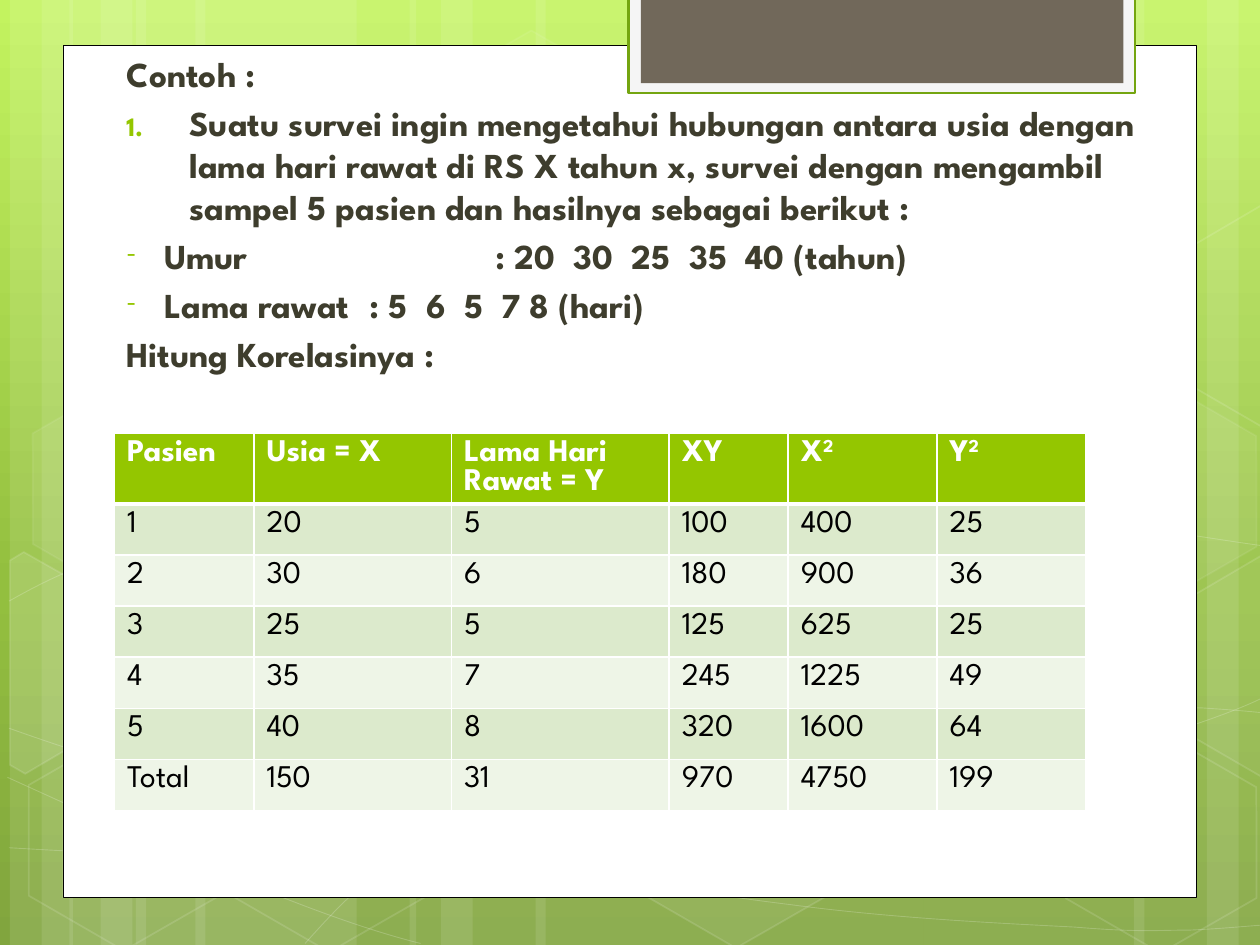
from copy import deepcopy
from dataclasses import dataclass

from lxml import etree
from pptx import Presentation
from pptx.dml.color import RGBColor
from pptx.enum import shapes as kinds, text as text_enum
from pptx.oxml import ns
from pptx.util import Cm, Pt


@dataclass(frozen=True)
class Theme:
    font: str = "League Spartan"
    body_size: int = 20
    table_size: int = 18
    white: str = "FFFFFF"
    black: str = "000000"
    body: str = "3E3D2D"
    accent: str = "94C600"
    banner: str = "71685A"
    banner_frame: str = "F5F5F5"
    banner_line: str = "74A510"
    bands: tuple = ("DCEACC", "EEF5E7")
    backdrop: tuple = ((0, "C3F35F"), (0.62, "93BF3F"), (1, "81A53E"))


theme = Theme()


def paint(shape, fill=None, line=None, width=1, fill_alpha=100, line_alpha=100):
    """Set fill and outline with their opacity in percent; None means no paint."""
    shape.shadow.inherit = False
    for part, color, alpha, route in (
            (shape.fill, fill, fill_alpha, "a:solidFill/a:srgbClr"),
            (shape.line.fill, line, line_alpha, "a:ln/a:solidFill/a:srgbClr")):
        if color is None:
            part.background()
            continue
        part.solid()
        part.fore_color.rgb = RGBColor.from_string(color)
        if alpha < 100:
            owner = shape._element.spPr.xpath(route)[0]
            etree.SubElement(owner, ns.qn("a:alpha")).set("val", str(alpha * 1000))
    if line:
        shape.line.width = Pt(width)


def add_run(paragraph, content, size, color, bold):
    run = paragraph.add_run()
    run.text = content
    run.font.name, run.font.size, run.font.bold = theme.font, Pt(size), bold
    run.font.color.rgb = RGBColor.from_string(color)
    return run


deck = Presentation()
deck.slide_width, deck.slide_height = Cm(25.4), Cm(19.05)
slide = deck.slides.add_slide(deck.slide_layouts[6])
canvas = slide.shapes
rect = kinds.MSO_SHAPE.RECTANGLE

# Backdrop gradient, top to bottom
backdrop = slide.background.fill
backdrop.gradient()
backdrop.gradient_angle = 270
stop_list = slide.background._cSld.find(".//" + ns.qn("a:gsLst"))
stop_list.append(deepcopy(stop_list[0]))
for stop, (position, color) in zip(backdrop.gradient_stops, theme.backdrop):
    stop.position = position
    stop.color.rgb = RGBColor.from_string(color)

# Pale vertical strips: left, width
for left, width in [(2.74, 4.45), (0.2, 1.27), (0.84, 2.11), (3.94, 4.45),
                    (1.4, 1.27), (2.03, 2.11), (18.62, 4.45), (24.33, 1.27),
                    (22.86, 2.11), (10.8, 7.82), (8.26, 1.27), (8.89, 2.11)]:
    strip = canvas.add_shape(rect, Cm(left), 0, Cm(width), deck.slide_height)
    paint(strip, theme.white, fill_alpha=10)

# Thin waves: a start point, then three points (two handles and an end) per curve
waves = [
    [(0.18, 17.09), (1.55, 17.17), (2.92, 17.25), (4.83, 17.22),
     (6.73, 17.2), (9.09, 17.15), (11.63, 16.89), (14.17, 16.64), (17.78, 16.15),
     (20.12, 15.67), (22.43, 15.19), (24.82, 14.43), (25.58, 14)],
    [(0.18, 12.12), (0.91, 11.71), (1.65, 11.33), (3.07, 10.95),
     (4.52, 10.57), (6.58, 10.01), (8.81, 9.83), (11.07, 9.65), (13.82, 9.63),
     (16.61, 9.83), (19.41, 10.01), (24.05, 10.82), (25.58, 11.02)],
    [(0.15, 15.67), (3.23, 17.07), (6.27, 18.47), (8.48, 19.02)],
    [(0.18, 14.68), (0.97, 14.96), (1.78, 15.24), (3.25, 15.65),
     (4.72, 16.03), (6.93, 16.66), (9.07, 17.09), (11.18, 17.53), (13.84, 17.98),
     (15.95, 18.24), (18.06, 18.52), (20.32, 18.62), (21.67, 18.69), (22.99, 18.8),
     (23.34, 18.75), (24, 18.75), (24.66, 18.72), (25.12, 18.67), (25.58, 18.64)],
    [(6.15, 19.02), (6.6, 18.52), (7.06, 18.01), (7.67, 17.55),
     (8.31, 17.09), (9.14, 16.59), (9.86, 16.23), (10.57, 15.88), (11, 15.72),
     (11.94, 15.47), (12.85, 15.21), (14.55, 14.86), (15.44, 14.68), (16.36, 14.5),
     (16.48, 14.5), (17.27, 14.45), (18.06, 14.38), (19.3, 14.3), (20.17, 14.27),
     (21.06, 14.25), (22.5, 14.27), (24.21, 14.27), (24.66, 14.3), (25.1, 14.33),
     (25.55, 14.38)],
]
for wave_points in waves:
    start, *rest = [(Cm(x), Cm(y)) for x, y in wave_points]
    outline = canvas.build_freeform(*start)
    outline.add_line_segments(rest, close=False)
    wave = outline.convert_to_shape()
    segments = wave._element.xpath(".//a:lnTo")
    for i in range(0, len(segments), 3):
        curve = etree.SubElement(segments[i].getparent(), ns.qn("a:cubicBezTo"))
        for segment in segments[i:i + 3]:
            curve.append(segment[0])
            segment.getparent().remove(segment)
    paint(wave, line=theme.white, width=0.5, line_alpha=20)

# Hexagons: left, top, fill opacity, line opacity
for left, top, fill_alpha, line_alpha in [
        (8.48, 0.91, 4, 8), (12.62, 14.96, 6, 12), (0.28, 15.01, 0, 12),
        (0.36, 7.92, 7, 8), (4.42, 15.04, 0, 12), (21.18, 15.06, 0, 12),
        (21.18, 7.98, 7, 8)]:
    hexagon = canvas.add_shape(kinds.MSO_SHAPE.HEXAGON, Cm(left), Cm(top), Cm(4.45), Cm(3.86))
    hexagon.adjustments[0] = 0.29
    hexagon.rotation = 30
    paint(hexagon, theme.white if fill_alpha else None, theme.white,
          fill_alpha=fill_alpha, line_alpha=line_alpha)

# Hexagons cut by the slide edges: corners, vertical shift, fill opacity
left_corners = [(0.2, 11.3), (0.48, 11.13), (2.44, 12.24), (2.41, 14.48), (0.51, 15.6), (0.2, 15.42)]
right_corners = [(23.52, 12.32), (25.43, 11.2), (25.63, 11.33), (25.63, 15.57), (25.45, 15.67),
                 (23.52, 14.55)]
for corners, shift, fill_alpha in [(left_corners, 0, 10), (right_corners, 0, 4),
                                   (right_corners, -7.06, 0)]:
    start, *rest = [(Cm(x), Cm(y + shift)) for x, y in corners]
    outline = canvas.build_freeform(*start)
    outline.add_line_segments(rest)
    paint(outline.convert_to_shape(), theme.white if fill_alpha else None, theme.white,
          fill_alpha=fill_alpha, line_alpha=12)

# White page and the banner hanging over its top edge
for left, top, width, height, fill, line, weight in [
        (1.27, 0.91, 22.86, 17.19, theme.white, theme.black, 0.5),
        (12.67, -0.05, 10.21, 1.93, theme.banner_frame, theme.banner_line, 1.25),
        (12.92, -0.05, 9.73, 1.73, theme.banner, None, 0)]:
    panel = canvas.add_shape(rect, Cm(left), Cm(top), Cm(width), Cm(height))
    paint(panel, fill, line, weight)

# Problem statement: text, left margin, first-line indent, bullet, tab stops
numbered = ("a:buAutoNum", {"type": "arabicPeriod"})
dashed = ("a:buChar", {"char": "-"})
statement = [
    ("Contoh :", 0.18, 0, None, ()),
    ("Suatu survei ingin mengetahui hubungan antara usia dengan lama hari rawat di RS X "
     "tahun x, survei dengan mengambil sampel 5 pasien dan hasilnya sebagai berikut :",
     1.45, -1.27, numbered, ()),
    ("Umur\t\t: 20  30  25  35  40 (tahun)", 0.94, -0.76, dashed, (5.08, 7.62)),
    ("Lama rawat\t: 5  6  5  7 8 (hari)", 0.94, -0.76, dashed, ()),
    ("Hitung Korelasinya :", 0.18, 0, None, ()),
]
problem = canvas.add_textbox(Cm(2.12), Cm(0.93), Cm(21.59), Cm(16.61)).text_frame
problem.word_wrap = True
problem.vertical_anchor = text_enum.MSO_ANCHOR.TOP
for index, (content, margin, indent, bullet, tab_stops) in enumerate(statement):
    paragraph = problem.add_paragraph() if index else problem.paragraphs[0]
    paragraph.space_before = Pt(4)
    add_run(paragraph, content, theme.body_size, theme.body, True)
    props = paragraph._p.get_or_add_pPr()
    props.set("marL", str(Cm(margin)))
    props.set("indent", str(Cm(indent)))
    if bullet:
        bullet_color = etree.SubElement(props, ns.qn("a:buClr"))
        etree.SubElement(bullet_color, ns.qn("a:srgbClr")).set("val", theme.accent)
        etree.SubElement(props, ns.qn("a:buSzPct")).set("val", "76000")
        etree.SubElement(props, ns.qn("a:buFont")).set("typeface", theme.font)
        etree.SubElement(props, ns.qn(bullet[0]), bullet[1])
    if tab_stops:
        tab_list = etree.SubElement(props, ns.qn("a:tabLst"))
        for position in tab_stops:
            etree.SubElement(tab_list, ns.qn("a:tab"), pos=str(Cm(position)), algn="l")

# Correlation table
patients = [("1", 20, 5), ("2", 30, 6), ("3", 25, 5), ("4", 35, 7), ("5", 40, 8)]
records = [(name, x, y, x * y, x * x, y * y) for name, x, y in patients]
totals = ("Total", *(sum(column) for column in list(zip(*records))[1:]))
headings = ("Pasien", "Usia = X", "Lama Hari Rawat = Y", "XY", "X²", "Y²")
rows = [headings, *records, totals]
column_widths = (2.81, 3.98, 4.39, 2.4, 3, 3)
ROW_HEIGHT = 1.03
table = canvas.add_table(len(rows), len(headings), Cm(2.31), Cm(8.74), Cm(sum(column_widths)),
                         Cm(ROW_HEIGHT * len(rows))).table
for column, width in zip(table.columns, column_widths):
    column.width = Cm(width)
for r, values in enumerate(rows):
    table.rows[r].height = Cm(ROW_HEIGHT)
    header = r == 0
    for c, value in enumerate(values):
        cell = table.cell(r, c)
        props = cell._tc.get_or_add_tcPr()
        for side in "LRTB":
            thick = (r, side) in ((0, "B"), (1, "T"))
            border = etree.SubElement(props, ns.qn("a:ln" + side), w=str(Pt(3 if thick else 1)))
            border_fill = etree.SubElement(border, ns.qn("a:solidFill"))
            etree.SubElement(border_fill, ns.qn("a:srgbClr")).set("val", theme.white)
        cell.fill.solid()
        cell.fill.fore_color.rgb = RGBColor.from_string(
            theme.accent if header else theme.bands[(r - 1) % 2])
        base, squared, _ = str(value).partition("²")
        look = (theme.table_size, theme.white if header else theme.black, header)
        label = cell.text_frame.paragraphs[0]
        if header:
            label.line_spacing = Pt(16.5)
        add_run(label, base, *look)
        if squared:
            power = add_run(label, "2", *look)
            power._r.get_or_add_rPr().set("baseline", "30000")

deck.save("out.pptx")
